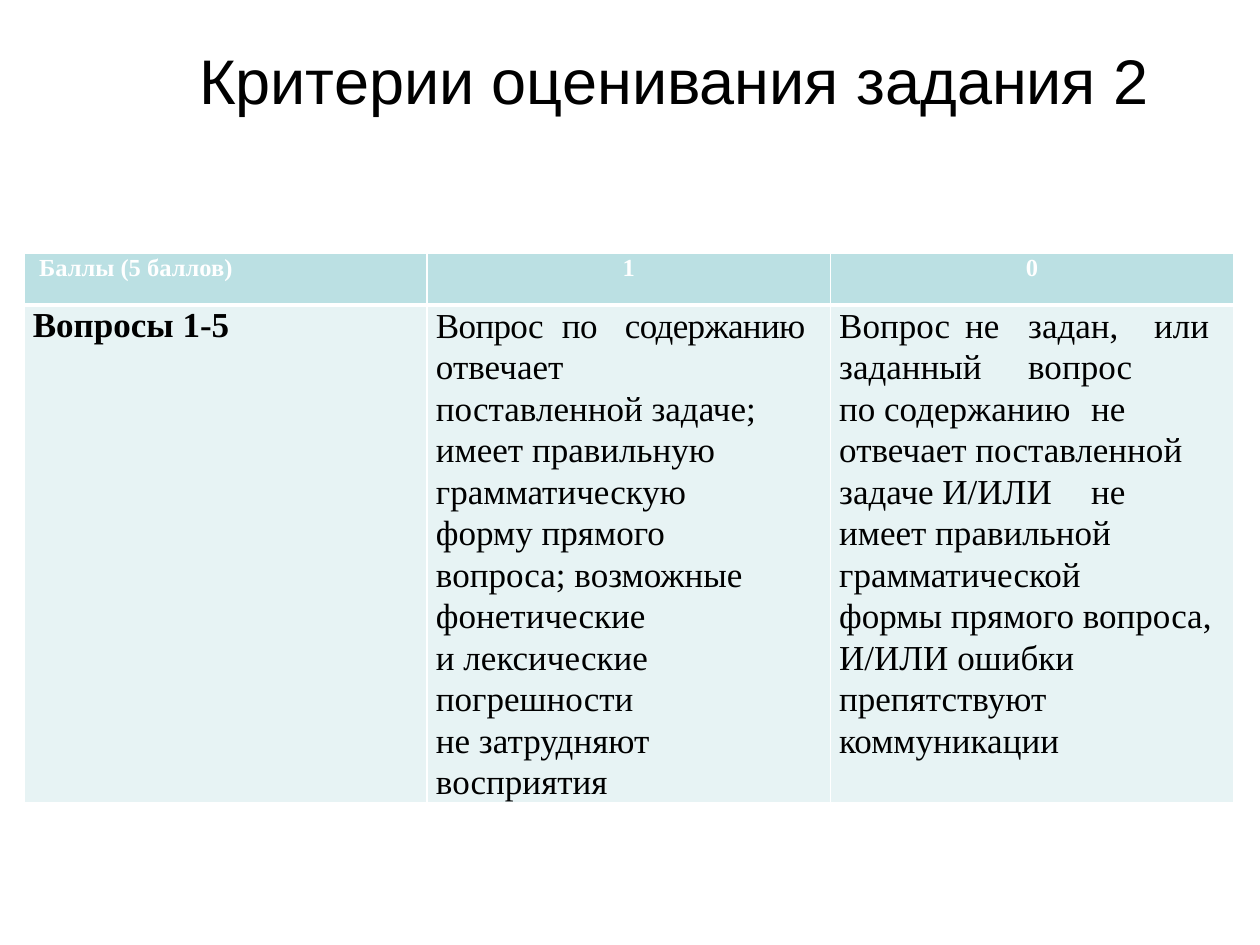
import lxml.etree
import pptx
import pptx.dml.color
import pptx.enum.text
import pptx.oxml.ns
import pptx.util

Inches = pptx.util.Inches
Pt = pptx.util.Pt
RGBColor = pptx.dml.color.RGBColor
PP_ALIGN = pptx.enum.text.PP_ALIGN
ANCHOR = pptx.enum.text.MSO_ANCHOR
qn = pptx.oxml.ns.qn

BLACK = RGBColor(0x00, 0x00, 0x00)
WHITE = RGBColor(0xFF, 0xFF, 0xFF)
HEADER_FILL = RGBColor(0xBB, 0xE0, 0xE3)
BODY_FILL = RGBColor(0xE7, 0xF3, 0xF4)


def write(para, text, font="Times New Roman", size=20, color=BLACK, bold=False,
          align=PP_ALIGN.LEFT, indent=0.07, before=0, line=None, tabs=(), tracking=0):
    """Fill a paragraph; \\v in the text breaks the line, tracking is in points."""
    para.text = text
    para.alignment = align
    para.space_before = Pt(before)
    para.line_spacing = line
    properties = para._p.get_or_add_pPr()
    properties.set("marL", str(Inches(indent)))
    properties.set("indent", "0")
    if tabs:
        tab_list = lxml.etree.SubElement(properties, qn("a:tabLst"))
        for position in tabs:
            lxml.etree.SubElement(tab_list, qn("a:tab"), pos=str(Inches(position)), algn="l")
    for span in para.runs:
        span.font.name = font
        span.font.size = Pt(size)
        span.font.bold = bold
        span.font.color.rgb = color
        span._r.get_or_add_rPr().set("spc", str(round(tracking * 100)))


def style_cell(cell, fill, top, bottom):
    """Set fill, margins and white borders; top and bottom are widths in points."""
    cell.margin_left = cell.margin_right = cell.margin_bottom = 0
    cell.margin_top = Inches(0.01)
    cell.vertical_anchor = ANCHOR.TOP
    properties = cell._tc.get_or_add_tcPr()
    for side, width in (("L", 1), ("R", 1), ("T", top), ("B", bottom)):
        border = lxml.etree.SubElement(properties, qn("a:ln" + side), w=str(Pt(width)))
        solid = lxml.etree.SubElement(border, qn("a:solidFill"))
        lxml.etree.SubElement(solid, qn("a:srgbClr"), val=str(WHITE))
    cell.fill.solid()
    cell.fill.fore_color.rgb = fill


deck = pptx.Presentation()
deck.slide_width = Inches(10)
deck.slide_height = Inches(7.5)
page = deck.slides.add_slide(deck.slide_layouts[5])

title = page.shapes.title
title.left, title.top = Inches(1.57), Inches(0.31)
title.width, title.height = Inches(7.72), Inches(0.63)
frame = title.text_frame
frame.margin_left = frame.margin_right = frame.margin_bottom = 0
frame.margin_top = Inches(0.01)
frame.vertical_anchor = ANCHOR.MIDDLE
write(frame.paragraphs[0], "Критерии оценивания задания 2",
      font="Arial", size=36, indent=0.01, before=1)

table = page.shapes.add_table(2, 3, Inches(0.19), Inches(2.01),
                              Inches(9.6), Inches(3.98)).table
table.horz_banding = False
for column in table.columns:
    column.width = Inches(3.2)
table.rows[0].height = Inches(0.41)
table.rows[1].height = Inches(3.57)
for index in range(3):
    style_cell(table.cell(0, index), HEADER_FILL, top=1, bottom=3)
    style_cell(table.cell(1, index), BODY_FILL, top=3, bottom=1)

headings = (("Баллы (5 баллов)", PP_ALIGN.LEFT, 0.12),
            ("1", PP_ALIGN.CENTER, 0),
            ("0", PP_ALIGN.CENTER, 0))
for index, (text, align, indent) in enumerate(headings):
    write(table.cell(0, index).text_frame.paragraphs[0], text, size=14, color=WHITE,
          bold=True, align=align, indent=indent, before=0.5)

write(table.cell(1, 0).text_frame.paragraphs[0], "Вопросы 1-5", bold=True, before=0.8)

# Column, opening line with its tabs and tracking, then the remaining lines with their tabs
criteria = (
    (1, "Вопрос\tпо\tсодержанию", (1.18, 1.7), -0.4,
     ("отвечает", "поставленной задаче;", "имеет правильную", "грамматическую",
      "форму прямого", "вопроса; возможные", "фонетические", "и лексические",
      "погрешности", "не затрудняют", "восприятия"), ()),
    (2, "Вопрос\tне\tзадан,\tили", (1.21, 1.73, 2.69), 0,
     ("заданный\tвопрос", "по содержанию\tне", "отвечает поставленной",
      "задаче И/ИЛИ\tне", "имеет правильной", "грамматической",
      "формы прямого вопроса,", "И/ИЛИ ошибки", "препятствуют",
      "коммуникации"), (1.61, 2.31)),
)
for index, opening, opening_tabs, tracking, lines, tabs in criteria:
    cell = table.cell(1, index)
    cell.margin_top = 0
    write(cell.text_frame.paragraphs[0], opening, line=Pt(23.3),
          tabs=opening_tabs, tracking=tracking)
    write(cell.text_frame.add_paragraph(), "\v".join(lines), line=1.07, tabs=tabs)

deck.save("out.pptx")
